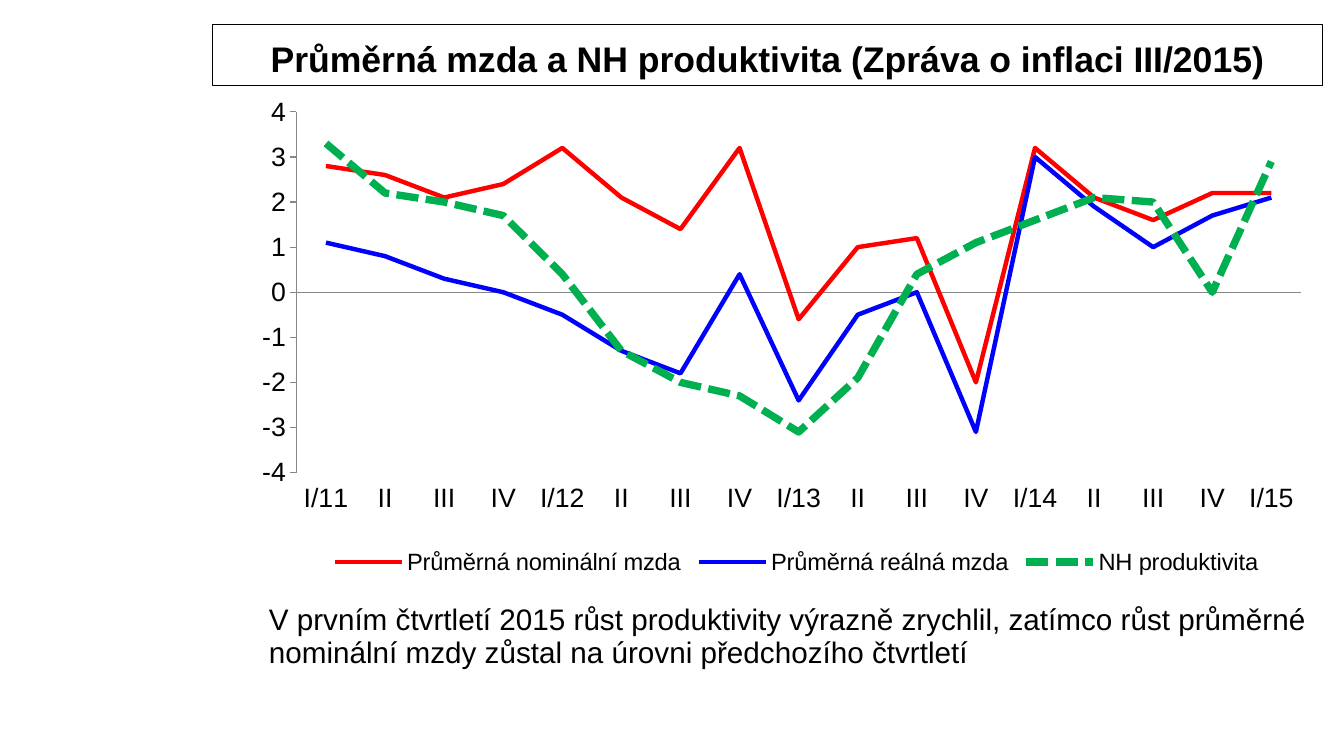
from dataclasses import dataclass
from typing import Any

from lxml import etree
from pptx import Presentation, util as u
from pptx.chart import data as cd
from pptx.dml import color as col
from pptx.enum import chart as ec, dml, shapes, text
from pptx.oxml import ns


@dataclass
class Box:
    left: float
    top: float
    width: float
    height: float

    def place(self) -> list[int]:
        return [u.Inches(n) for n in (self.left, self.top, self.width, self.height)]


@dataclass
class Trend:
    name: str
    hue: str
    width: float
    dash: Any
    vals: list[float]


SOLID, DASH = dml.MSO_LINE.SOLID, dml.MSO_LINE.SQUARE_DOT
TRENDS = [
    Trend("Průměrná nominální mzda", "FF0000", 3, SOLID,
          [2.8, 2.6, 2.1, 2.4, 3.2, 2.1, 1.4, 3.2, -0.6, 1, 1.2, -2, 3.2, 2.1, 1.6, 2.2, 2.2]),
    Trend("Průměrná reálná mzda", "0000FF", 3, SOLID,
          [1.1, 0.8, 0.3, 0, -0.5, -1.3, -1.8, 0.4, -2.4, -0.5, 0, -3.1, 3, 1.9, 1, 1.7, 2.1]),
    Trend("NH produktivita", "00B050", 5, DASH,
          [3.3, 2.2, 2, 1.7, 0.4, -1.3, -2, -2.3, -3.1, -1.9, 0.4, 1.1, 1.6, 2.1, 2, 0, 2.9]),
]
TERMS = [f"I/{year}" if term == "I" else term
         for year in range(11, 15) for term in ("I", "II", "III", "IV")] + ["I/15"]
TITLE = "Průměrná mzda a NH produktivita (Zpráva o inflaci III/2015)"
NOTE = ("V prvním čtvrtletí 2015 růst produktivity výrazně zrychlil, "
        "zatímco růst průměrné nominální mzdy zůstal na úrovni předchozího čtvrtletí")


def paint(hue: str) -> col.RGBColor:
    return col.RGBColor.from_string(hue)


def apply(item: Any, form: dict[str, Any]) -> None:
    for key, val in form.items():
        setattr(item, key, val)


def style(font: Any, size: float, bold: bool = False) -> None:
    apply(font, {"name": "Arial", "size": u.Pt(size), "bold": bold})
    font.color.rgb = paint("000000")


def stroke(line: Any, hue: str, width: float, dash: Any = SOLID) -> None:
    line.color.rgb = paint(hue)
    apply(line, {"width": u.Pt(width), "dash_style": dash})


def lay_out(node: Any, index: int, area: Box, inner: bool = False) -> None:
    for old in node.findall(ns.qn("c:layout")):
        node.remove(old)
    lay = etree.Element(ns.qn("c:layout"))
    man = etree.SubElement(lay, ns.qn("c:manualLayout"))
    vals = {"layoutTarget": "inner"} if inner else {}
    vals |= {"xMode": "edge", "yMode": "edge", "x": area.left, "y": area.top,
             "w": area.width, "h": area.height}
    for tag, val in vals.items():
        etree.SubElement(man, ns.qn(f"c:{tag}")).set("val", str(val))
    node.insert(index, lay)


def add_title(slide: Any, box: Box) -> None:
    shape = slide.shapes.add_shape(shapes.MSO_SHAPE.RECTANGLE, *box.place())
    shape.shadow.inherit = False
    shape.fill.background()
    stroke(shape.line, "000000", 0.75)
    frame = shape.text_frame
    apply(frame, {"text": TITLE, "word_wrap": False,
                  "vertical_anchor": text.MSO_ANCHOR.BOTTOM})
    para = frame.paragraphs[0]
    para.alignment = text.PP_ALIGN.CENTER
    style(para.runs[0].font, 24, True)


def add_graph(slide: Any, box: Box) -> None:
    data = cd.CategoryChartData()
    data.categories = TERMS
    for trend in TRENDS:
        data.add_series(trend.name, trend.vals)
    chart = slide.shapes.add_chart(ec.XL_CHART_TYPE.LINE, *box.place(), data).chart
    apply(chart, {"has_title": False, "has_legend": True})
    style(chart.font, 10)
    plot = chart.plots[0]
    plot.vary_by_categories = False
    for line, trend in zip(plot.series, TRENDS):
        line.smooth = False
        line.marker.style = ec.XL_MARKER_STYLE.NONE
        stroke(line.format.line, trend.hue, trend.width, trend.dash)

    tick = ec.XL_TICK_MARK
    cat, val = chart.category_axis, chart.value_axis
    apply(cat, {"major_tick_mark": tick.NONE,
                "tick_label_position": ec.XL_TICK_LABEL_POSITION.LOW})
    apply(val, {"minimum_scale": -4, "maximum_scale": 4, "major_unit": 1,
                "major_tick_mark": tick.OUTSIDE})
    apply(val.tick_labels, {"number_format": "0", "number_format_is_linked": False})
    for axis in (cat, val):
        apply(axis, {"has_major_gridlines": False, "minor_tick_mark": tick.NONE})
        style(axis.tick_labels.font, 18)
        stroke(axis.format.line, "868686", 0.75)

    key = chart.legend
    apply(key, {"position": ec.XL_LEGEND_POSITION.BOTTOM, "include_in_layout": False})
    style(key.font, 16)
    lay_out(key._element, 1, Box(0.08, 0.87, 0.87, 0.08))
    area = chart._chartSpace.chart.plotArea
    lay_out(area, 0, Box(0.054, 0.024, 0.926, 0.71), True)


def add_note(slide: Any, box: Box) -> None:
    table = slide.shapes.add_table(1, 1, *box.place()).table
    apply(table, {"first_row": False, "horz_banding": False})
    cell = table.cell(0, 0)
    cell.fill.background()
    sides = ("left", "right", "top", "bottom")
    apply(cell, {"text": NOTE, "vertical_anchor": text.MSO_ANCHOR.MIDDLE}
          | {f"margin_{side}": 0 for side in sides})
    style(cell.text_frame.paragraphs[0].runs[0].font, 20)


def main() -> None:
    deck = Presentation()
    apply(deck, {"slide_width": u.Inches(12.6), "slide_height": u.Inches(7.09)})
    slide = deck.slides.add_slide(deck.slide_layouts[6])
    add_title(slide, Box(1.99, 0.23, 10.41, 0.57))
    add_graph(slide, Box(2.23, 0.91, 10.17, 4.79))
    add_note(slide, Box(2.52, 5.64, 9.83, 0.67))
    deck.save("out.pptx")


if __name__ == "__main__":
    main()
